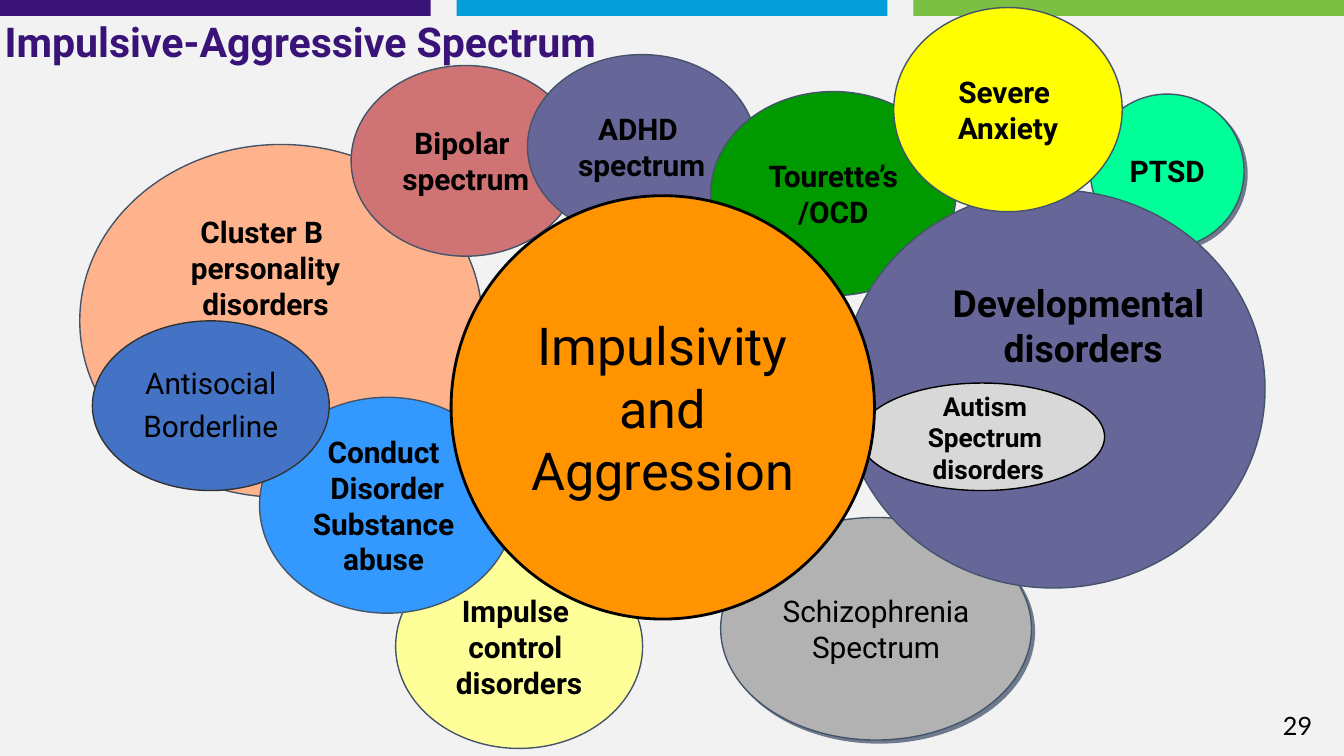
from lxml.etree import SubElement
from pptx import Presentation
from pptx.dml.color import RGBColor
from pptx.enum.shapes import MSO_SHAPE as Preset
from pptx.enum.text import MSO_ANCHOR as Anchor, MSO_AUTO_SIZE as AutoSize, PP_ALIGN as Align
from pptx.oxml.ns import qn
from pptx.util import Inches, Pt

COLOURS = {
    "background": "F2F2F2", "black": "000000", "slate": "44546A", "charcoal": "333333",
    "indigo": "391378", "sky": "049FDA", "leaf": "7BBF43",
    "peach": "FFB38D", "mint": "00FF99", "lemon": "FFFF99", "rose": "D07375",
    "violet": "666699", "green": "009900", "blue": "3399FF", "grey": "B2B2B2",
    "silver": "D8D8D8", "yellow": "FFFF00", "royal": "4472C4", "orange": "FF9300",
}
COLUMNS, ROWS = 160, 90


class SpectrumSlide:
    """Holds the style and the slide; boxes are (column, row, columns wide, rows high)."""

    font = "Roboto"
    label_size = 21.3
    insets = (0.13, 0.07)

    def __init__(self, presentation):
        self.cell_width = presentation.slide_width / COLUMNS
        self.cell_height = presentation.slide_height / ROWS
        self.slide = presentation.slides.add_slide(presentation.slide_layouts[6])
        self.paint(self.slide.background.fill, "background")

    def place(self, box):
        left, top, width, height = box
        return (round(left * self.cell_width), round(top * self.cell_height),
                round(width * self.cell_width), round(height * self.cell_height))

    def paint(self, fill, colour):
        fill.solid()
        fill.fore_color.rgb = RGBColor.from_string(COLOURS[colour])

    def bar(self, box, colour):
        shape = self.slide.shapes.add_shape(Preset.RECTANGLE, *self.place(box))
        shape.shadow.inherit = False
        self.paint(shape.fill, colour)
        shape.line.fill.background()

    def oval(self, box, colour, paragraphs=(), line="slate", line_width=1, shadow=False, **style):
        shape = self.slide.shapes.add_shape(Preset.OVAL, *self.place(box))
        shape.shadow.inherit = False
        self.paint(shape.fill, colour)
        self.paint(shape.line.fill, line)
        shape.line.width = Pt(line_width)
        if shadow:
            self.drop_shadow(shape)
        if paragraphs:
            self.add_text(shape.text_frame, paragraphs, **style)

    def drop_shadow(self, shape):
        effects = shape._element.spPr.find(qn("a:effectLst"))
        outer = SubElement(effects, qn("a:outerShdw"), dist=str(Pt(3)), dir="2700000",
                           algn="ctr", rotWithShape="0")
        colour = SubElement(outer, qn("a:srgbClr"), val=COLOURS["slate"])
        SubElement(colour, qn("a:alpha"), val="75000")

    def caption(self, box, paragraphs, grow=True, **style):
        frame = self.slide.shapes.add_textbox(*self.place(box)).text_frame
        self.add_text(frame, paragraphs, anchor=Anchor.TOP if grow else Anchor.MIDDLE, **style)
        if grow:
            frame.auto_size = AutoSize.SHAPE_TO_FIT_TEXT

    def add_text(self, frame, paragraphs, size=label_size, bold=True, colour="black", font=font,
                 align=Align.CENTER, anchor=Anchor.MIDDLE, insets=insets, spacing=None, before=0):
        frame.word_wrap = True
        frame.vertical_anchor = anchor
        frame.margin_left = frame.margin_right = Inches(insets[0])
        frame.margin_top = frame.margin_bottom = Inches(insets[1])
        for index, text in enumerate(paragraphs):
            paragraph = frame.add_paragraph() if index else frame.paragraphs[0]
            paragraph.alignment = align
            if spacing:
                paragraph.line_spacing = spacing
            if index and before:
                paragraph.space_before = Pt(before)
            for number, line in enumerate(text.split("\n")):
                if number:
                    paragraph.add_line_break()
                run = paragraph.add_run()
                run.text = line
                run.font.name = font
                run.font.size = Pt(size)
                run.font.bold = bold
                run.font.color.rgb = RGBColor.from_string(COLOURS[colour])


def main():
    presentation = Presentation()
    presentation.slide_width, presentation.slide_height = Inches(13.33), Inches(7.5)
    spectrum = SpectrumSlide(presentation)

    # Top bars, evenly spaced across the slide
    gap = 3.1
    bar_width = (COLUMNS - 2 * gap) / 3
    for index, colour in enumerate(("indigo", "sky", "leaf")):
        spectrum.bar((index * (bar_width + gap), 0, bar_width, 1.9), colour)

    # Page number
    spectrum.caption((149, 84, 8.4, 4.8), ["29"], grow=False, size=18, bold=False,
                     font="Lato", align=Align.RIGHT, insets=(0.1, 0.05))

    # Outer disorders, from back to front
    spectrum.oval((9.5, 17.2, 47.9, 42), "peach")
    spectrum.oval((129.8, 11.2, 18.3, 18.3), "mint", ["PTSD"], shadow=True)
    spectrum.oval((47.1, 64.8, 29.4, 24.3), "lemon", ["Impulse \ncontrol \ndisorders"])
    spectrum.oval((41.8, 7.8, 27.3, 22.7), "rose", ["Bipolar \nspectrum"])
    spectrum.oval((62.8, 6.5, 27.2, 21.9), "violet", ["ADHD \nspectrum"])
    spectrum.caption((13.4, 24.6, 36.4, 18.8), ["Cluster B \npersonality disorders"])
    spectrum.oval((84.6, 10.9, 29.2, 24.3), "green", ["Tourette’s", "/OCD"])
    spectrum.oval((30.9, 47.3, 30.4, 25.7), "blue",
                  ["Conduct ", "Disorder", "Substance \nabuse "])
    spectrum.oval((85.8, 61.6, 37, 26.5), "grey", ["Schizophrenia ", "Spectrum"],
                  bold=False, shadow=True)

    # Developmental disorders with the autism spectrum inside
    spectrum.oval((100.2, 22.6, 50.4, 47.4), "violet")
    spectrum.caption((111, 32.5, 35.9, 12.4), ["Developmental \ndisorders"], size=26.7)
    spectrum.oval((102.3, 45.6, 29.2, 12.8), "silver", line="black")
    spectrum.caption((108.4, 45.6, 18.5, 12.8), ["Autism \nSpectrum \ndisorders"], size=18.7)

    # Front ovals
    spectrum.oval((106.4, 0.9, 27.2, 24.3), "yellow", ["Severe ", "Anxiety"])
    spectrum.oval((11, 38.2, 28.2, 20.2), "royal", ["Antisocial", "Borderline"],
                  line="charcoal", bold=False, insets=(0.13, 0.06), spacing=0.95, before=6.4)

    # Shared core
    spectrum.oval((53.7, 23.3, 50.4, 50.4), "orange", ["Impulsivity and Aggression"],
                  line="black", line_width=2, size=37.3, bold=False)

    # Title
    spectrum.caption((-1, -0.1, 97.9, 10.1), ["Impulsive-Aggressive Spectrum"], grow=False,
                     size=29.3, colour="indigo", align=Align.LEFT, insets=(0.13, 0.13))

    presentation.save("out.pptx")


if __name__ == "__main__":
    main()
